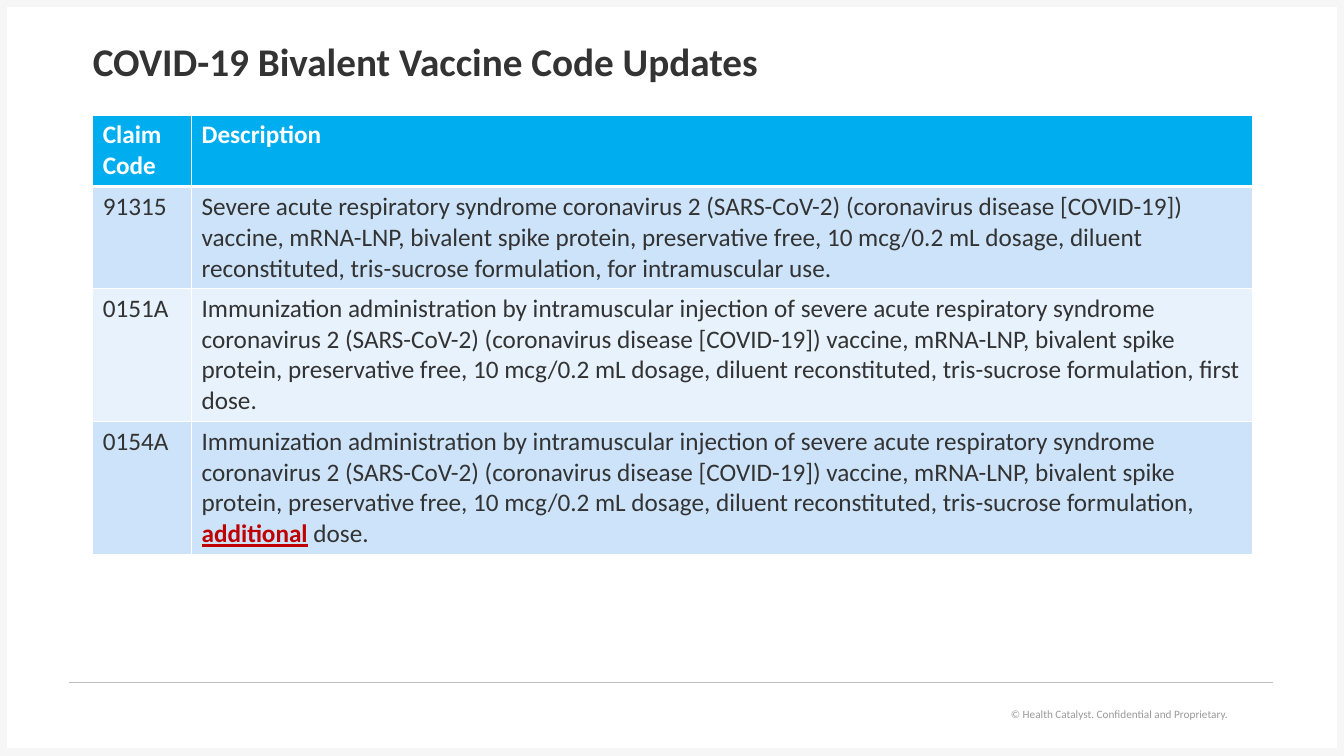
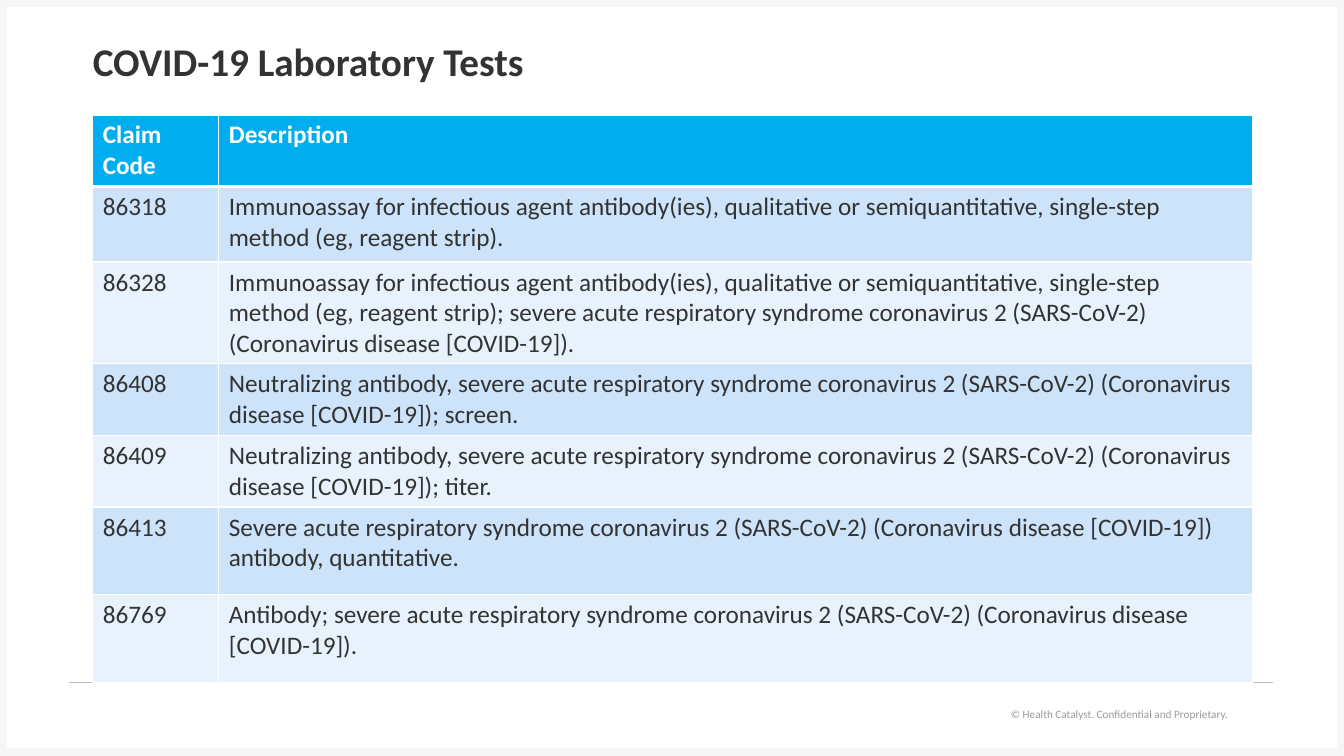
from lxml import etree
from pptx import Presentation
from pptx.dml.color import RGBColor
from pptx.enum.shapes import MSO_CONNECTOR, MSO_SHAPE
from pptx.enum.text import MSO_ANCHOR, MSO_AUTO_SIZE, PP_ALIGN
from pptx.oxml.ns import qn
from pptx.util import Inches, Pt

FONT = "Calibri"
COLORS = {
    "text": "333333",
    "white": "FFFFFF",
    "header": "00AEEF",
    "band_dark": "CCE3F9",
    "band_light": "E7F2FC",
    "emphasis": "C00000",
    "footer": "999999",
    "rule": "BCBEBC",
    "frame": "F6F6F6",
}
TITLE_BOX = (0.92, 0.4, 11.5, 0.46)
TABLE_BOX = (0.92, 1.14, 11.5)
FOOTER_BOX = (9.83, 6.97, 2.45, 0.24)
HEADINGS = ("Claim Code", "Description")

VIRUS = "evere acute respiratory syndrome coronavirus 2 (SARS-CoV-2)"
VACCINE = (
    f"{VIRUS} (coronavirus disease [COVID-19]) vaccine, mRNA-LNP, bivalent spike protein, "
    "preservative free, 10 mcg/0.2 mL dosage, diluent reconstituted, tris-sucrose formulation, "
)
ADMINISTRATION = f"Immunization administration by intramuscular injection of s{VACCINE}"
DISEASE = f"{VIRUS} (Coronavirus disease [COVID-19])"
IMMUNOASSAY = (
    "Immunoassay for infectious agent antibody(ies), qualitative or semiquantitative, "
    "single-step method (eg, reagent strip)"
)
EMPHASIS = {"color": "emphasis", "bold": True, "underline": True}

# Each row: code, description (text, or a list of text and format pairs), height
VACCINE_ROWS = [
    ("91315", f"S{VACCINE}for intramuscular use.", 1.01),
    ("0151A", f"{ADMINISTRATION}first dose.", 1.32),
    ("0154A", [(ADMINISTRATION, {}), ("additional", EMPHASIS), (" dose.", {})], 1.32),
]
LABORATORY_ROWS = [
    ("86318", f"{IMMUNOASSAY}.", 0.75),
    ("86328", f"{IMMUNOASSAY}; s{DISEASE}.", 1.01),
    ("86408", f"Neutralizing antibody, s{DISEASE}; screen.", 0.71),
    ("86409", f"Neutralizing antibody, s{DISEASE}; titer.", 0.71),
    ("86413", f"S{DISEASE} antibody, quantitative.", 0.87),
    ("86769", f"Antibody; s{DISEASE}.", 0.87),
]


def rgb(name):
    return RGBColor.from_string(COLORS[name])


def add_text(paragraph, text, size=18, color="text", bold=False, underline=False):
    run = paragraph.add_run()
    run.text = text
    run.font.name = FONT
    run.font.size = Pt(size)
    run.font.color.rgb = rgb(color)
    run.font.bold = bold
    run.font.underline = underline


def add_title(slide, text, box):
    title = slide.shapes.title
    title.left, title.top, title.width, title.height = map(Inches, box)
    frame = title.text_frame
    frame.auto_size = MSO_AUTO_SIZE.NONE
    frame.word_wrap = True
    frame.vertical_anchor = MSO_ANCHOR.MIDDLE
    frame.margin_left = 0
    paragraph = frame.paragraphs[0]
    paragraph.alignment = PP_ALIGN.LEFT
    paragraph.line_spacing = 0.9
    add_text(paragraph, text, size=28, bold=True)


def add_frame(slide):
    frame = slide.shapes.add_shape(
        MSO_SHAPE.RECTANGLE, *map(Inches, (0.02, 0.02, 13.29, 7.46)))
    frame.shadow.inherit = False
    frame.fill.background()
    frame.line.color.rgb = rgb("frame")
    frame.line.width = Pt(7.75)


def add_footer(slide, box):
    footer = slide.shapes.add_textbox(*map(Inches, box))
    footer.fill.solid()
    footer.fill.fore_color.rgb = rgb("white")
    footer.text_frame.word_wrap = True
    paragraph = footer.text_frame.paragraphs[0]
    paragraph.alignment = PP_ALIGN.RIGHT
    add_text(paragraph, "© Health Catalyst. Confidential and Proprietary.", size=8, color="footer")

    rule = slide.shapes.add_connector(
        MSO_CONNECTOR.STRAIGHT, *map(Inches, (0.68, 6.77, 12.63, 6.77)))
    rule.line.color.rgb = rgb("rule")
    rule.line.width = Pt(0.75)
    etree.SubElement(rule._element.spPr, qn("a:effectLst"))


def set_borders(cell, top=1, bottom=1):
    properties = cell._tc.get_or_add_tcPr()
    for side, width in (("L", 1), ("R", 1), ("T", top), ("B", bottom)):
        line = etree.SubElement(properties, qn(f"a:ln{side}"), w=str(Pt(width)))
        fill = etree.SubElement(line, qn("a:solidFill"))
        etree.SubElement(fill, qn("a:srgbClr"), val=COLORS["white"])


def fill_cell(cell, content, fill, top=1, bottom=1, **text_format):
    set_borders(cell, top, bottom)
    cell.fill.solid()
    cell.fill.fore_color.rgb = rgb(fill)
    runs = [(content, text_format)] if isinstance(content, str) else content
    for text, run_format in runs:
        add_text(cell.text_frame.paragraphs[0], text, **run_format)


def add_code_table(slide, rows, code_width, box, header_height=0.71):
    left, top, width = box
    heights = [header_height] + [height for _, _, height in rows]
    table = slide.shapes.add_table(
        len(heights), len(HEADINGS), *map(Inches, (left, top, width, sum(heights)))).table
    for column, column_width in zip(table.columns, (code_width, width - code_width)):
        column.width = Inches(column_width)
    for row, height in zip(table.rows, heights):
        row.height = Inches(height)

    for cell, heading in zip(table.rows[0].cells, HEADINGS):
        fill_cell(cell, heading, "header", bottom=3, color="white", bold=True)
    for index, (code, description, _) in enumerate(rows, start=1):
        band = "band_dark" if index % 2 else "band_light"
        for cell, content in zip(table.rows[index].cells, (code, description)):
            fill_cell(cell, content, band, top=3 if index == 1 else 1)


def add_code_slide(presentation, title, rows, code_width):
    slide = presentation.slides.add_slide(presentation.slide_layouts[5])
    add_frame(slide)
    add_footer(slide, FOOTER_BOX)
    add_title(slide, title, TITLE_BOX)
    add_code_table(slide, rows, code_width, TABLE_BOX)


def main():
    presentation = Presentation()
    presentation.slide_width = Inches(13.33)
    presentation.slide_height = Inches(7.5)
    add_code_slide(presentation, "COVID-19 Bivalent Vaccine Code Updates", VACCINE_ROWS, 0.98)
    add_code_slide(presentation, "COVID-19 Laboratory Tests", LABORATORY_ROWS, 1.25)
    presentation.save("out.pptx")


if __name__ == "__main__":
    main()
